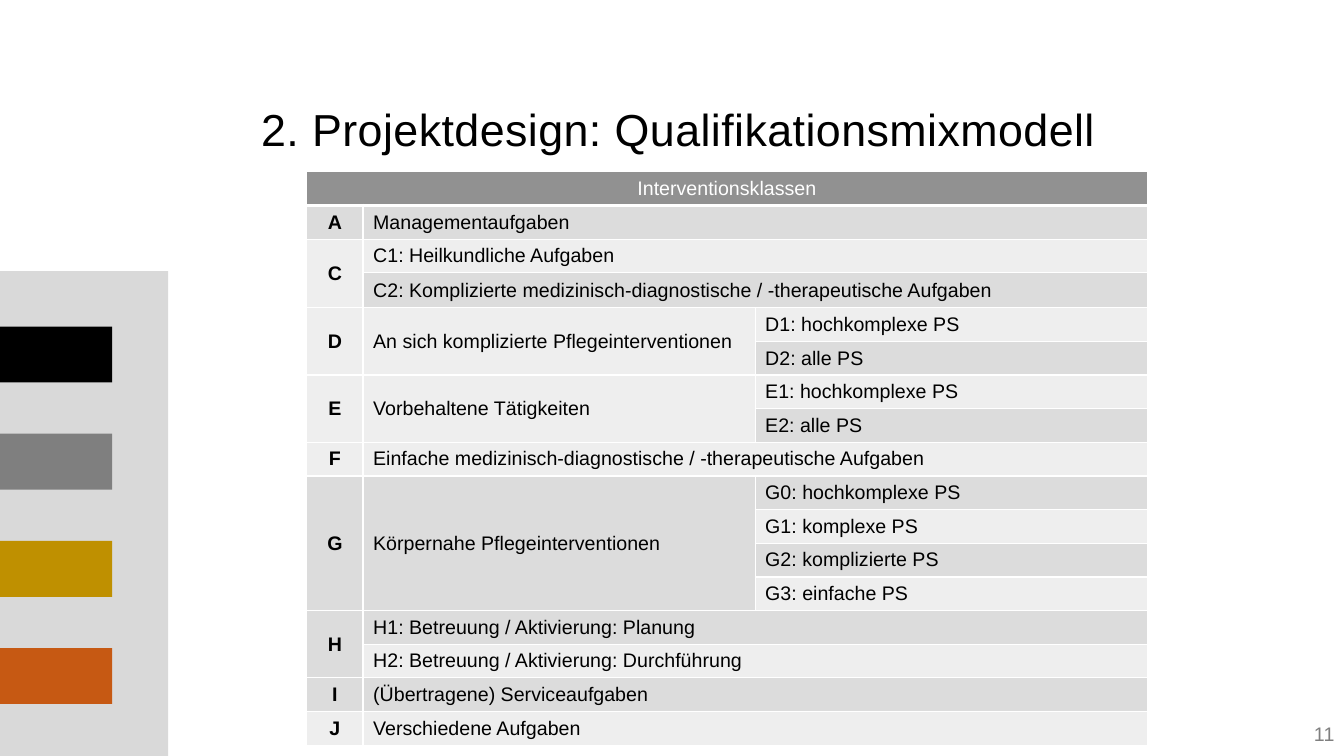
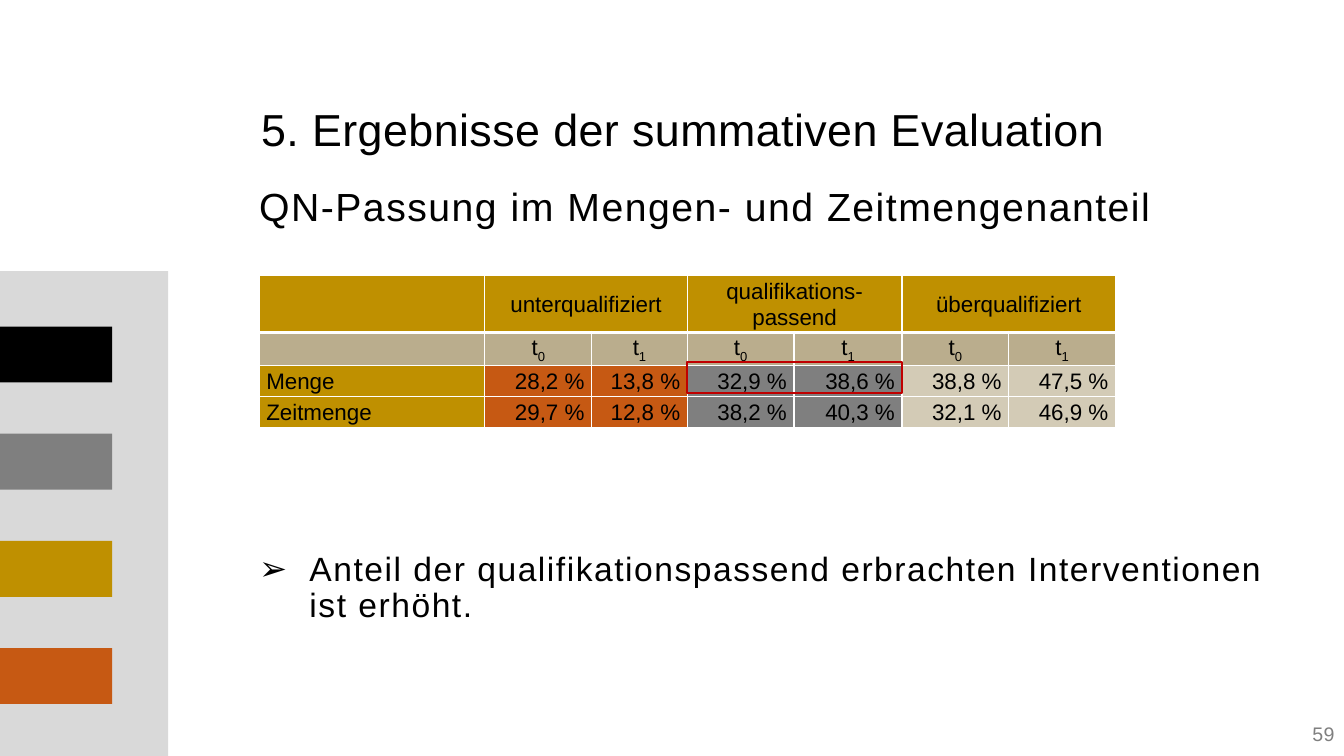
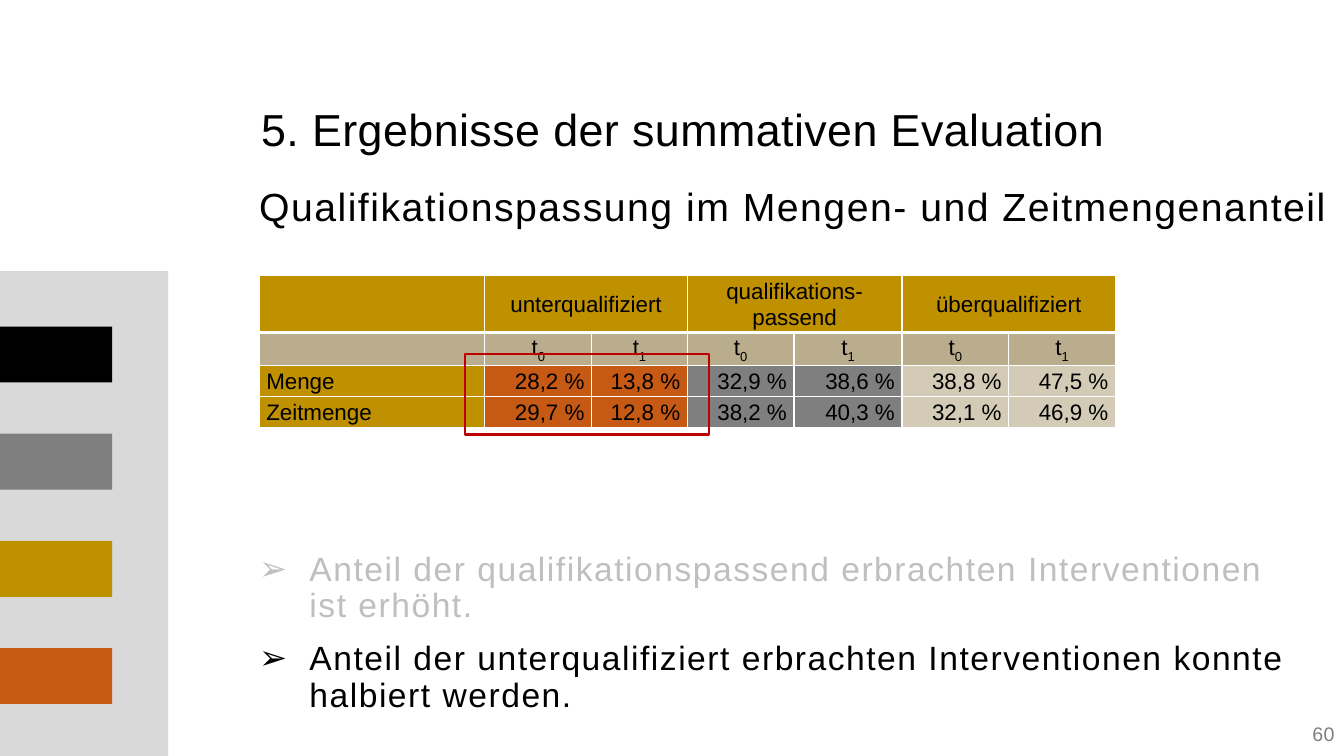
from lxml.etree import SubElement
from pptx import Presentation
from pptx.dml.color import RGBColor
from pptx.enum.shapes import MSO_SHAPE
from pptx.enum.text import MSO_ANCHOR, PP_ALIGN
from pptx.oxml.ns import qn
from pptx.util import Cm, Pt

BLACK, WHITE, GREY, SILVER = "000000", "FFFFFF", "7F7F7F", "BFBFBF"
PANEL, GOLD, ORANGE, RED = "D9D9D9", "BF9000", "C65913", "C00000"
SAND, PALE_SAND = "BAAD8D", "D3CBB6"
HEADER, DARK_BAND, LIGHT_BAND = "919191", "DCDCDC", "EEEEEE"

CLASSES = [
    ("A", "", ["Managementaufgaben"]),
    ("C", "", ["C1: Heilkundliche Aufgaben",
               "C2: Komplizierte medizinisch-diagnostische / -therapeutische Aufgaben"]),
    ("D", "An sich komplizierte Pflegeinterventionen",
     ["D1: hochkomplexe PS", "D2: alle PS"]),
    ("E", "Vorbehaltene Tätigkeiten", ["E1: hochkomplexe PS", "E2: alle PS"]),
    ("F", "", ["Einfache medizinisch-diagnostische / -therapeutische Aufgaben"]),
    ("G", "Körpernahe Pflegeinterventionen",
     ["G0: hochkomplexe PS", "G1: komplexe PS", "G2: komplizierte PS", "G3: einfache PS"]),
    ("H", "", ["H1: Betreuung / Aktivierung: Planung",
               "H2: Betreuung / Aktivierung: Durchführung"]),
    ("I", "", ["(Übertragene) Serviceaufgaben"]),
    ("J", "", ["Verschiedene Aufgaben"]),
]
GROUPS = ["unterqualifiziert", "qualifikations-passend", "überqualifiziert"]
SHARES = [
    ("Menge", ["28,2", "13,8", "32,9", "38,6", "38,8", "47,5"]),
    ("Zeitmenge", ["29,7", "12,8", "38,2", "40,3", "32,1", "46,9"]),
]
RAISED = "Anteil der qualifikationspassend erbrachten Interventionen ist erhöht."
HALVED = "Anteil der unterqualifiziert erbrachten Interventionen konnte halbiert werden."


def color(value):
    return RGBColor.from_string(value)


class Deck:
    font = "Arial"

    def __init__(self):
        self.deck = Presentation()
        self.deck.slide_width, self.deck.slide_height = Cm(33.87), Cm(19.05)
        self.page = None

    def new_page(self, title, number):
        self.page = self.deck.slides.add_slide(self.deck.slide_layouts[6])
        self.rectangle(0, 6.83, 4.24, 12.22, fill=PANEL)
        for index, fill in enumerate([BLACK, GREY, GOLD, ORANGE]):
            self.rectangle(0, 8.23 + 2.7 * index, 2.83, 1.41, fill=fill)
        frame = self.text_frame(31.04, 18.31, 2.59, 0.53, MSO_ANCHOR.MIDDLE)
        self.set_text(frame.paragraphs[0], str(number), 14, GREY, PP_ALIGN.RIGHT, Pt(12), 20)
        frame = self.text_frame(6.58, 2.34, 26.5, 1.78, MSO_ANCHOR.MIDDLE)
        self.set_text(frame.paragraphs[0], title, 32, spacing=30)

    def rectangle(self, left, top, width, height, fill=None, line=None):
        shape = self.page.shapes.add_shape(
            MSO_SHAPE.RECTANGLE, Cm(left), Cm(top), Cm(width), Cm(height))
        shape.shadow.inherit = False
        if fill:
            shape.fill.solid()
            shape.fill.fore_color.rgb = color(fill)
        else:
            shape.fill.background()
        if line:
            shape.line.color.rgb = color(line)
            shape.line.width = Pt(1.5)
        else:
            shape.line.fill.background()

    def text_frame(self, left, top, width, height, anchor=MSO_ANCHOR.TOP):
        box = self.page.shapes.add_textbox(Cm(left), Cm(top), Cm(width), Cm(height))
        frame = box.text_frame
        frame.word_wrap = True
        frame.vertical_anchor = anchor
        frame.margin_left = frame.margin_right = 0
        frame.margin_top = frame.margin_bottom = 0
        return frame

    def set_text(self, paragraph, text, size, ink=BLACK, align=PP_ALIGN.LEFT,
                 line_spacing=None, spacing=0, bold=False, subscript=""):
        paragraph.alignment = align
        paragraph.line_spacing = line_spacing
        font = paragraph.font
        font.name, font.size, font.bold = self.font, Pt(size), bold
        font.color.rgb = color(ink)
        for part, baseline in [(text, None), (subscript, "-25000")]:
            if part:
                span = paragraph.add_run()
                span.text = part
                properties = span._r.get_or_add_rPr()
                if spacing:
                    properties.set("spc", str(spacing))
                if baseline:
                    properties.set("baseline", baseline)
        if not text:
            SubElement(paragraph._p, qn("a:endParaRPr"), sz=str(size * 100))

    def subtitle(self, text):
        frame = self.text_frame(6.53, 4.72, 27.2, 1.42)
        self.set_text(frame.paragraphs[0], text, 28, line_spacing=0.9, spacing=110)

    def bullets(self, items):
        frame = self.text_frame(6.53, 13.92, 26.29, 3.23)
        for index, (text, ink) in enumerate(items):
            paragraph = frame.add_paragraph() if index else frame.paragraphs[0]
            if index:
                paragraph.space_before = Pt(12)
            paragraph.line_spacing = 0.9
            properties = paragraph._p.get_or_add_pPr()
            properties.set("marL", str(Cm(1.27)))
            properties.set("indent", str(-Cm(1.27)))
            SubElement(SubElement(properties, qn("a:buClr")), qn("a:srgbClr"), val=ink)
            SubElement(properties, qn("a:buFont"), typeface=self.font)
            SubElement(properties, qn("a:buChar"), char="➢")
            self.set_text(paragraph, text, 24, ink, line_spacing=0.9, spacing=110)

    def table(self, left, top, widths, heights):
        frame = self.page.shapes.add_table(
            len(heights), len(widths), Cm(left), Cm(top), Cm(sum(widths)), Cm(sum(heights)))
        table = frame.table
        table.first_row = table.horz_banding = False
        for column, width in zip(table.columns, widths):
            column.width = Cm(width)
        for row, height in zip(table.rows, heights):
            row.height = Cm(height)
        return table

    def cell(self, table, row, column, text, fill, size=14, rows=1, columns=1, **style):
        cell = table.cell(row, column)
        if rows * columns > 1:
            cell.merge(table.cell(row + rows - 1, column + columns - 1))
        for down in range(rows):
            for across in range(columns):
                part = table.cell(row + down, column + across)
                self.borders(part, 3 if row == 0 else 1)
                part.fill.solid()
                part.fill.fore_color.rgb = color(fill)
        cell.vertical_anchor = MSO_ANCHOR.MIDDLE
        self.set_text(cell.text_frame.paragraphs[0], text, size, **style)
        return cell

    def compact_cell(self, table, row, column, text, fill, **style):
        cell = self.cell(table, row, column, text, fill, 16, line_spacing=1.07, **style)
        cell.margin_left = cell.margin_right = Cm(0.18)
        cell.margin_top = cell.margin_bottom = 0

    def borders(self, cell, bottom):
        properties = cell._tc.get_or_add_tcPr()
        for side, width in [("L", 1), ("R", 1), ("T", 1), ("B", bottom)]:
            line = SubElement(properties, qn(f"a:ln{side}"), w=str(Pt(width)))
            SubElement(SubElement(line, qn("a:solidFill")), qn("a:srgbClr"), val=WHITE)

    def class_table(self):
        heights = [0.8] * 17
        heights[3] = 0.88
        table = self.table(7.73, 4.33, [1.42, 9.88, 9.88], heights)
        self.cell(table, 0, 0, "Interventionsklassen", HEADER, columns=3,
                  ink=WHITE, align=PP_ALIGN.CENTER)
        bands = [LIGHT_BAND, DARK_BAND]
        row = 1
        for letter, name, items in CLASSES:
            count = len(items)
            self.cell(table, row, 0, letter, bands[row % 2], rows=count,
                      align=PP_ALIGN.CENTER, bold=True)
            if name:
                self.cell(table, row, 1, name, bands[row % 2], rows=count)
            for item in items:
                if name:
                    self.cell(table, row, 2, item, bands[row % 2])
                else:
                    self.cell(table, row, 1, item, bands[row % 2], columns=2)
                row += 1

    def share_table(self):
        table = self.table(6.53, 6.93, [5.69, 2.69, 2.41, 2.69, 2.72, 2.69, 2.69],
                           [1.34, 0.8, 0.79, 0.79])
        for row, fill in enumerate([GOLD, SAND]):
            self.compact_cell(table, row, 0, "", fill)
        for index, group in enumerate(GROUPS):
            first = 1 + 2 * index
            self.compact_cell(table, 0, first, group, GOLD, columns=2,
                              align=PP_ALIGN.CENTER)
            for time in range(2):
                self.compact_cell(table, 1, first + time, "t", SAND,
                                  subscript=str(time), align=PP_ALIGN.CENTER)
        for row, (name, values) in enumerate(SHARES, 2):
            self.compact_cell(table, row, 0, name, GOLD, align=PP_ALIGN.JUSTIFY)
            for index, value in enumerate(values):
                fill = [ORANGE, GREY, PALE_SAND][index // 2]
                self.compact_cell(table, row, index + 1, f"{value} %", fill,
                                  align=PP_ALIGN.RIGHT)

    def result_page(self, number, subtitle, items, highlight):
        self.new_page("5. Ergebnisse der summativen Evaluation", number)
        self.share_table()
        self.bullets(items)
        self.subtitle(subtitle)
        self.rectangle(*highlight, line=RED)


def main():
    deck = Deck()
    deck.new_page("2. Projektdesign: Qualifikationsmixmodell", 11)
    deck.class_table()
    deck.result_page(59, "QN-Passung im Mengen- und Zeitmengenanteil",
                     [(RAISED, BLACK)], (17.32, 9.12, 5.41, 0.79))
    deck.result_page(60, "Qualifikationspassung im Mengen- und Zeitmengenanteil",
                     [(RAISED, SILVER), (HALVED, BLACK)], (11.73, 8.92, 6.15, 2.03))
    deck.deck.save("out.pptx")


if __name__ == "__main__":
    main()
